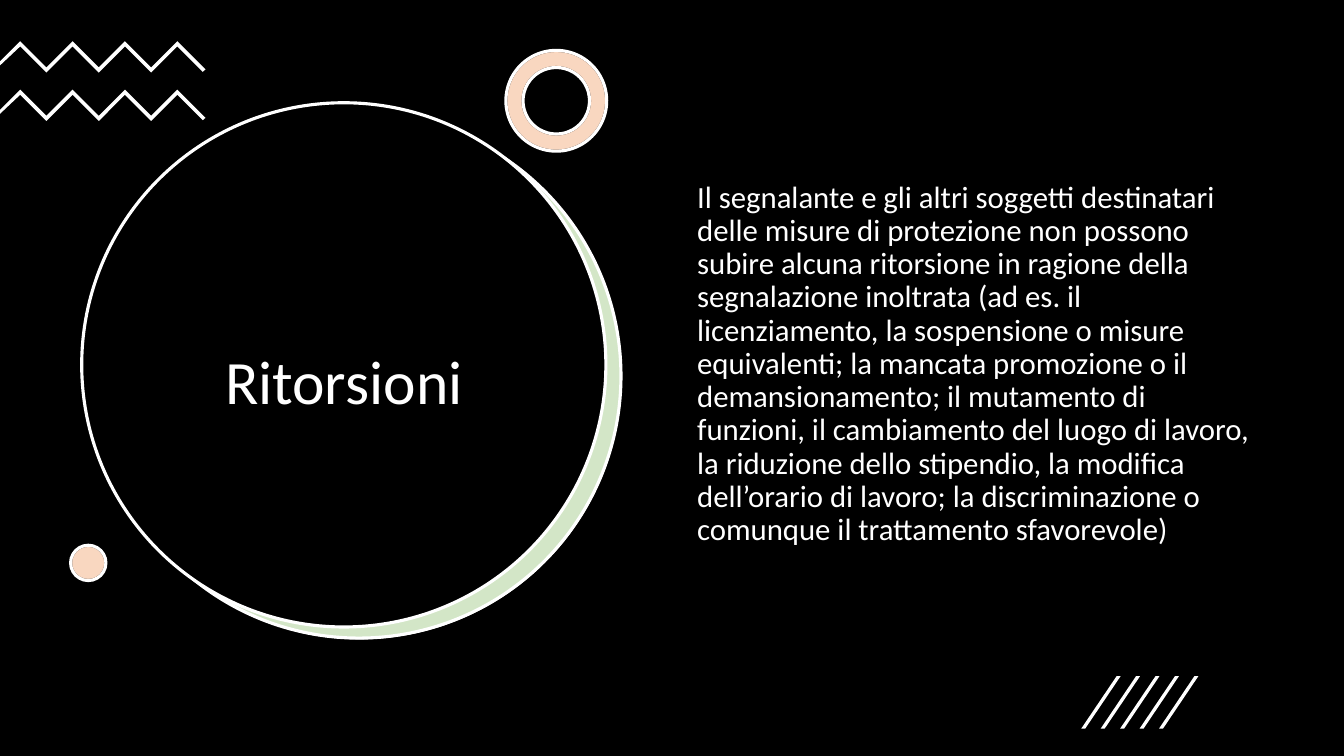
import pptx
import pptx.dml.color
import pptx.enum.shapes
import pptx.enum.text
import pptx.oxml.ns
import pptx.util
from lxml import etree

Cm, Pt = pptx.util.Cm, pptx.util.Pt
RGBColor = pptx.dml.color.RGBColor
MSO_SHAPE = pptx.enum.shapes.MSO_SHAPE
PP_ALIGN = pptx.enum.text.PP_ALIGN
MSO_ANCHOR = pptx.enum.text.MSO_ANCHOR

BLACK = RGBColor(0x00, 0x00, 0x00)
WHITE = RGBColor(0xFF, 0xFF, 0xFF)
GREEN = RGBColor(0x70, 0xAD, 0x47)
ORANGE = RGBColor(0xED, 0x7D, 0x31)

# Content; all lengths in centimetres
SLIDE_SIZE = (33.87, 19.05)
TITLE = "Ritorsioni"
BODY = (
    "Il segnalante e gli altri soggetti destinatari delle misure di protezione "
    "non possono subire alcuna ritorsione in ragione della segnalazione inoltrata "
    "(ad es. il licenziamento, la sospensione o misure equivalenti; la mancata "
    "promozione o il demansionamento; il mutamento di funzioni, il cambiamento del "
    "luogo di lavoro, la riduzione dello stipendio, la modifica dell’orario di "
    "lavoro; la discriminazione o comunque il trattamento sfavorevole)"
)
TEXTS = [
    # text, box, anchor, paragraph format, font format
    (TITLE, (3.07, 5.21, 11.2, 8.94), MSO_ANCHOR.MIDDLE,
     {"alignment": PP_ALIGN.CENTER, "line_spacing": 0.9},
     {"name": "Calibri", "size": Pt(44)}),
    (BODY, (17.32, 4.45, 14.5, 10.79), MSO_ANCHOR.TOP,
     {"alignment": PP_ALIGN.LEFT, "line_spacing": 0.9},
     {"name": "Calibri", "size": Pt(22)}),
]

# Round shapes: kind, left, top, diameter, fill, opacity in percent, line
BIG = 13.21
RING = (MSO_SHAPE.DONUT, 12.75, 1.27, 2.54)
DOT = (MSO_SHAPE.OVAL, 1.78, 13.74, 0.89)
BIG_CIRCLES = [
    (MSO_SHAPE.OVAL, 2.46, 2.9, BIG, WHITE, 100, None),
    (MSO_SHAPE.OVAL, 2.44, 2.87, BIG, GREEN, 30, WHITE),
    (MSO_SHAPE.OVAL, 2.06, 2.59, BIG, BLACK, 100, WHITE),
]
ACCENTS = [
    accent + tint
    for accent in (RING, DOT)
    for tint in ((WHITE, 100, BLACK), (ORANGE, 30, WHITE))
]
RING_THICKNESS = 0.17

# Zigzags and slanted stripes
WAVE_TOPS = (1.04, 2.26)
WAVE_START, WAVE_STEP, WAVE_THICKNESS, WAVE_CORNERS = 0.51, 0.66, 0.13, 7
STRIPE_COUNT, STRIPE_LEFT, STRIPE_STEP = 5, 27.25, 0.49
STRIPE_TOP, STRIPE_HEIGHT, STRIPE_SLANT, STRIPE_WIDTH = 17.04, 1.32, 0.89, 0.1

presentation = pptx.Presentation()
presentation.slide_width, presentation.slide_height = map(Cm, SLIDE_SIZE)
slide = presentation.slides.add_slide(presentation.slide_layouts[6])


def paint(shape, fill, opacity=100, line=None):
    shape.shadow.inherit = False
    shape.fill.solid()
    shape.fill.fore_color.rgb = fill
    if opacity < 100:
        color = shape.fill._xPr.find(".//" + pptx.oxml.ns.qn("a:srgbClr"))
        etree.SubElement(color, pptx.oxml.ns.qn("a:alpha"), val=str(opacity * 1000))
    if line is None:
        shape.line.fill.background()
    else:
        shape.line.color.rgb = line
        shape.line.width = Pt(2.25)


def add_round(kind, left, top, diameter, fill, opacity, line):
    shape = slide.shapes.add_shape(kind, *map(Cm, (left, top, diameter, diameter)))
    if kind == MSO_SHAPE.DONUT:
        shape.adjustments[0] = RING_THICKNESS
    paint(shape, fill, opacity, line)


def add_outline(points):
    corners = [(Cm(x), Cm(y)) for x, y in points]
    builder = slide.shapes.build_freeform(*corners[0])
    builder.add_line_segments(corners[1:], close=True)
    paint(builder.convert_to_shape(), WHITE)


def add_text(text, box, anchor, paragraph_format, font_format):
    frame = slide.shapes.add_textbox(*map(Cm, box)).text_frame
    frame.word_wrap = True
    frame.vertical_anchor = anchor
    paragraph = frame.paragraphs[0]
    for name, value in paragraph_format.items():
        setattr(paragraph, name, value)
    run = paragraph.add_run()
    run.text = text
    for name, value in font_format.items():
        setattr(run.font, name, value)
    run.font.color.rgb = WHITE


# Background and large circles
background = slide.shapes.add_shape(MSO_SHAPE.RECTANGLE, 0, 0, *map(Cm, SLIDE_SIZE))
paint(background, BLACK)
for circle in BIG_CIRCLES:
    add_round(*circle)

# Zigzags: upper edge, slanted end, lower edge back to the slide border
for top in WAVE_TOPS:
    upper = [(WAVE_START + WAVE_STEP * i, top + WAVE_STEP * (i % 2))
             for i in range(WAVE_CORNERS)]
    lower = [(x, y + WAVE_THICKNESS) for x, y in reversed(upper)]
    end = [(5.18, top + 0.71), (5.11, top + 0.77)]
    border = [(0, top + 0.61), (0, top + 0.51)]
    add_outline(upper + end + lower + border)

# Ring and dot
for accent in ACCENTS:
    add_round(*accent)

# Stripes
for i in range(STRIPE_COUNT):
    left = STRIPE_LEFT + STRIPE_STEP * i
    bottom = STRIPE_TOP + STRIPE_HEIGHT
    add_outline([
        (left + STRIPE_WIDTH, bottom), (left, bottom),
        (left + STRIPE_SLANT, STRIPE_TOP),
        (left + STRIPE_SLANT + STRIPE_WIDTH, STRIPE_TOP),
    ])

# Title and body
for entry in TEXTS:
    add_text(*entry)

presentation.save("out.pptx")
